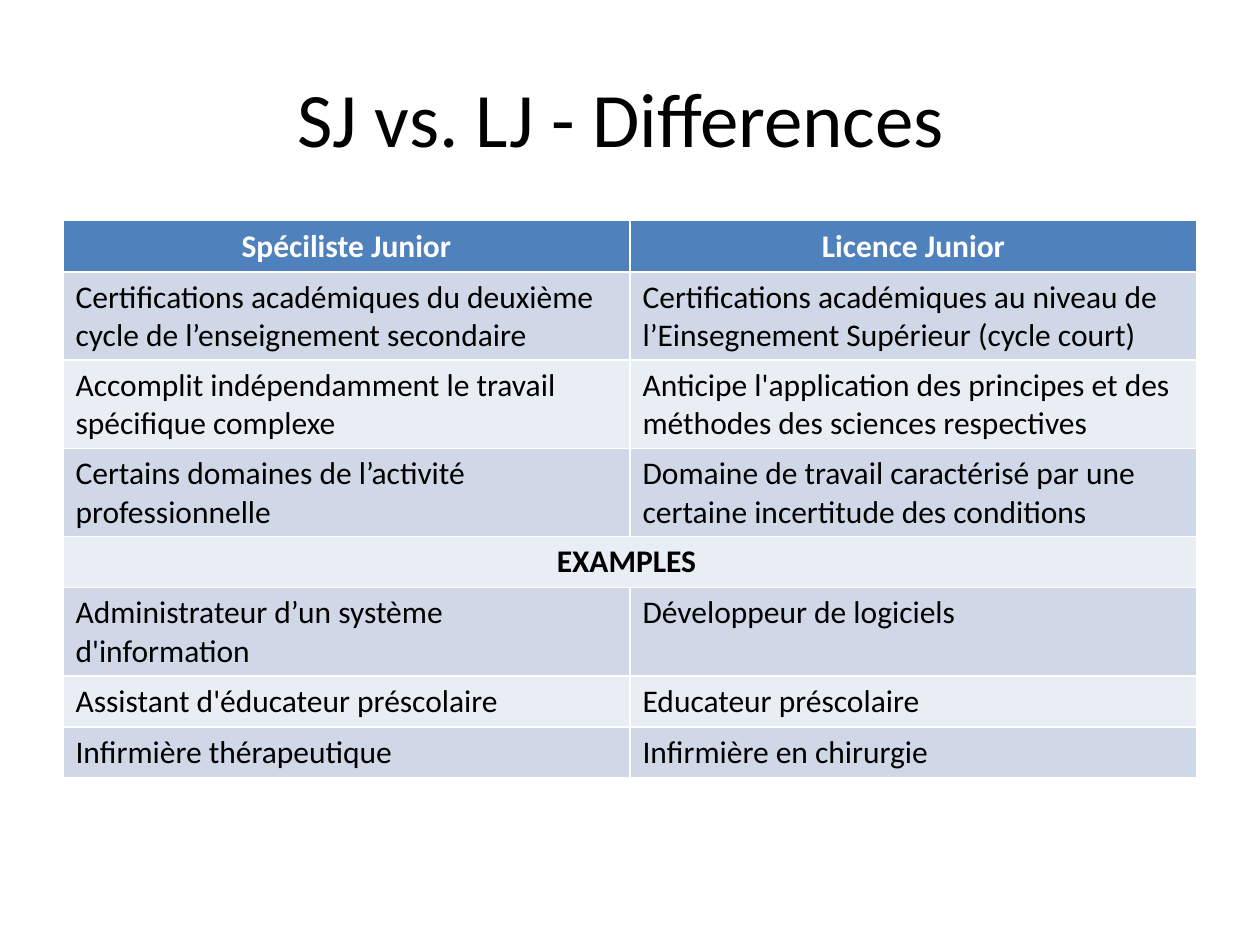
from dataclasses import dataclass

from pptx import Presentation
from pptx.dml.color import RGBColor
from pptx.enum.text import MSO_ANCHOR, PP_ALIGN
from pptx.util import Cm, Pt

CENTER, LEFT = PP_ALIGN.CENTER, PP_ALIGN.LEFT
MIDDLE = MSO_ANCHOR.MIDDLE


@dataclass(frozen=True)
class Theme:
    font: str = "Calibri"
    title: int = 44
    body: int = 18
    black: str = "000000"
    white: str = "FFFFFF"
    head: str = "4F81BD"
    bands: tuple = ("E9EDF4", "D0D8E8")


theme = Theme()


def write(frame, text, size, color, align, bold=False):
    frame.text = text
    para = frame.paragraphs[0]
    para.alignment = align
    font = para.runs[0].font
    font.name, font.size, font.bold = theme.font, Pt(size), bold
    font.color.rgb = RGBColor.from_string(color)


rows = [
    ("Spéciliste Junior", "Licence Junior"),
    ("Certifications académiques du deuxième cycle de l’enseignement secondaire",
     "Certifications académiques au niveau de l’Einsegnement Supérieur (cycle court)"),
    ("Accomplit indépendamment le travail spécifique complexe",
     "Anticipe l'application des principes et des méthodes des sciences respectives"),
    ("Certains domaines de l’activité professionnelle",
     "Domaine de travail caractérisé par une certaine incertitude des conditions"),
    ("EXAMPLES ",),
    ("Administrateur d’un système d'information", "Développeur de logiciels"),
    ("Assistant d'éducateur préscolaire", "Educateur préscolaire"),
    ("Infirmière thérapeutique", "Infirmière en chirurgie"),
]

prs = Presentation()
prs.slide_width, prs.slide_height = Cm(25.4), Cm(19.05)
slide = prs.slides.add_slide(prs.slide_layouts[6])

left, width = Cm(1.27), Cm(22.86)
title = slide.shapes.add_textbox(left, Cm(0.76), width, Cm(3.18)).text_frame
title.word_wrap = True
title.vertical_anchor = MIDDLE
write(title, "SJ vs. LJ - Differences ", theme.title, theme.black, CENTER)

# Rows grow to fit their text
height = Cm(1.03) * len(rows)
table = slide.shapes.add_table(len(rows), 2, left, Cm(4.45), width, height).table

for r, texts in enumerate(rows):
    head, merged = r == 0, len(texts) == 1
    if merged:
        table.cell(r, 0).merge(table.cell(r, 1))
    fill = theme.head if head else theme.bands[r % 2]
    color = theme.white if head else theme.black
    strong = head or merged
    for c, text in enumerate(texts):
        cell = table.cell(r, c)
        cell.fill.solid()
        cell.fill.fore_color.rgb = RGBColor.from_string(fill)
        write(cell.text_frame, text, theme.body, color,
              CENTER if strong else LEFT, strong)

prs.save("out.pptx")
